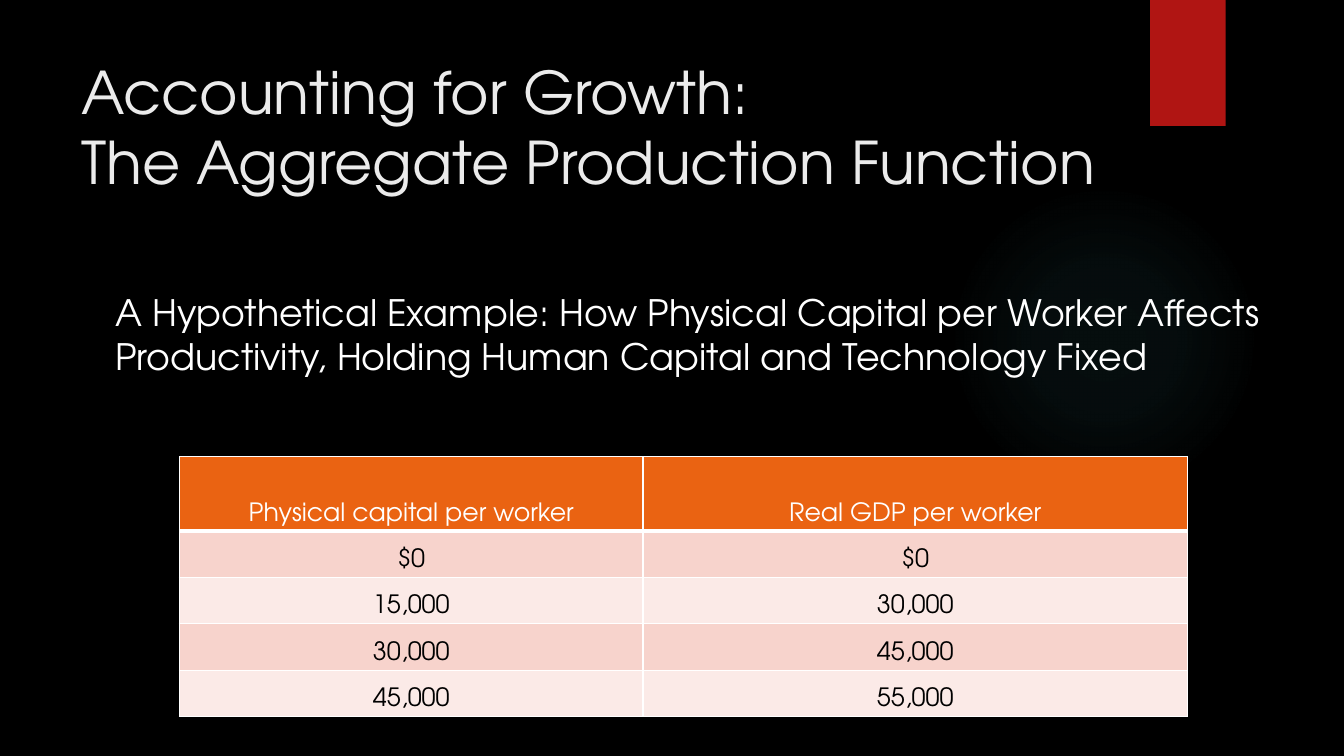
from dataclasses import dataclass

from lxml.etree import SubElement
from pptx import Presentation
from pptx.dml.color import RGBColor
from pptx.enum.shapes import MSO_SHAPE as Shape
from pptx.enum.text import MSO_ANCHOR as Anchor, PP_ALIGN as Align
from pptx.oxml import parse_xml
from pptx.oxml.ns import nsdecls, qn
from pptx.util import Inches, Pt

COLUMNS, ROWS = 160, 90
UNIT = Inches(7.5) / ROWS


@dataclass(frozen=True)
class Theme:
    font: str = "TeX Gyre Adventor"
    background: str = "000000"
    glow: str = "50B9C1"
    ribbon: str = "B01513"
    title: str = "EBEBEB"
    light: str = "FFFFFF"
    dark: str = "000000"
    header: str = "EA6312"
    bands: tuple = ("F7D3CC", "FBEAE7")
    title_size: int = 42
    body_size: int = 26
    table_size: int = 18


THEME = Theme()
TITLE = ["Accounting for Growth:", "The Aggregate Production Function"]
BODY = ["A Hypothetical Example: How Physical Capital per Worker Affects "
        "Productivity, Holding Human Capital and Technology Fixed"]
CAPITAL_AND_GDP = [
    ("Physical capital per worker", "Real GDP per worker"),
    ("$0", "$0"),
    ("15,000", "30,000"),
    ("30,000", "45,000"),
    ("45,000", "55,000"),
]


def grid(*units):
    """Turn grid units (160 columns by 90 rows) into slide lengths."""
    return [round(unit * UNIT) for unit in units]


def apply(target, values):
    for name, value in values.items():
        setattr(target, name, value)


def write_lines(para, lines, size, color):
    """Fill one paragraph, with a line break between the lines."""
    for index, line in enumerate(lines):
        if index:
            para.add_line_break()
        span = para.add_run()
        span.text = line
        apply(span.font, {"name": THEME.font, "size": Pt(size)})
        span.font.color.rgb = RGBColor.from_string(color)


def add_plain_shape(slide, kind, place, color):
    shape = slide.shapes.add_shape(kind, *grid(*place))
    shape.shadow.inherit = False
    shape.fill.solid()
    shape.fill.fore_color.rgb = RGBColor.from_string(color)
    shape.line.fill.background()
    return shape


def add_glow(slide, place):
    """Draw a circle that fades out from its centre."""
    properties = add_plain_shape(slide, Shape.OVAL, place, THEME.glow).element.spPr
    stops = "".join(
        f'<a:gs pos="{position * 1000}"><a:srgbClr val="{THEME.glow}">'
        f'<a:alpha val="{alpha * 1000}"/></a:srgbClr></a:gs>'
        for position, alpha in ((0, 7), (36, 6), (69, 0)))
    gradient = parse_xml(
        f'<a:gradFill {nsdecls("a")}><a:gsLst>{stops}</a:gsLst><a:path path="circle">'
        '<a:fillToRect l="50000" t="50000" r="50000" b="50000"/></a:path></a:gradFill>')
    properties.replace(properties.find(qn("a:solidFill")), gradient)


def add_text(slide, place, lines, size, color, indent=0):
    box = slide.shapes.add_textbox(*grid(*place))
    apply(box.text_frame, {"word_wrap": True, "vertical_anchor": Anchor.TOP})
    para = box.text_frame.paragraphs[0]
    if indent:
        para._p.get_or_add_pPr().set("marL", str(Inches(indent)))
    write_lines(para, lines, size, color)


def set_borders(cell, bottom):
    properties = cell._tc.get_or_add_tcPr()
    widths = {"lnL": 1, "lnR": 1, "lnT": 1, "lnB": bottom}
    for index, (side, width) in enumerate(widths.items()):
        line = parse_xml(
            f'<a:{side} {nsdecls("a")} w="{Pt(width)}"/>')
        fill = SubElement(line, qn("a:solidFill"))
        SubElement(fill, qn("a:srgbClr"), val=THEME.light)
        properties.insert(index, line)


def format_cell(cell, text, fill, color, bottom):
    apply(cell, {"vertical_anchor": Anchor.BOTTOM,
                 "margin_left": Inches(0.13), "margin_right": Inches(0.13),
                 "margin_top": Inches(0.05), "margin_bottom": Inches(0.05)})
    cell.fill.solid()
    cell.fill.fore_color.rgb = RGBColor.from_string(fill)
    set_borders(cell, bottom)
    para = cell.text_frame.paragraphs[0]
    para.alignment = Align.CENTER
    write_lines(para, [text], THEME.table_size, color)


def add_data_table(slide, left, top, widths, heights, records):
    place = grid(left, top, sum(widths), sum(heights))
    table = slide.shapes.add_table(len(heights), len(widths), *place).table
    for column, width in zip(table.columns, grid(*widths)):
        column.width = width
    for row, height in zip(table.rows, grid(*heights)):
        row.height = height
    for index, record in enumerate(records):
        if index == 0:
            style = (THEME.header, THEME.light, 3)
        else:
            style = (THEME.bands[(index - 1) % 2], THEME.dark, 1)
        for cell, text in zip(table.rows[index].cells, record):
            format_cell(cell, text, *style)


def main():
    deck = Presentation()
    deck.slide_width, deck.slide_height = grid(COLUMNS, ROWS)
    slide = deck.slides.add_slide(deck.slide_layouts[6])
    slide.background.fill.solid()
    slide.background.fill.fore_color.rgb = RGBColor.from_string(THEME.background)

    add_glow(slide, (112.92, 21.96, 36.96, 36.96))
    add_plain_shape(slide, Shape.RECTANGLE, (136.92, 0, 9, 15), THEME.ribbon)
    add_text(slide, (8.5, 6, 123.5, 18.36), TITLE, THEME.title_size, THEME.title)
    add_text(slide, (8, 34, 144, 16.92), BODY, THEME.body_size, THEME.light, indent=0.38)
    add_data_table(slide, 21.36, 54.36, (55.2, 64.8), [8.88] + [5.52] * 4,
                   CAPITAL_AND_GDP)
    deck.save("out.pptx")


if __name__ == "__main__":
    main()
